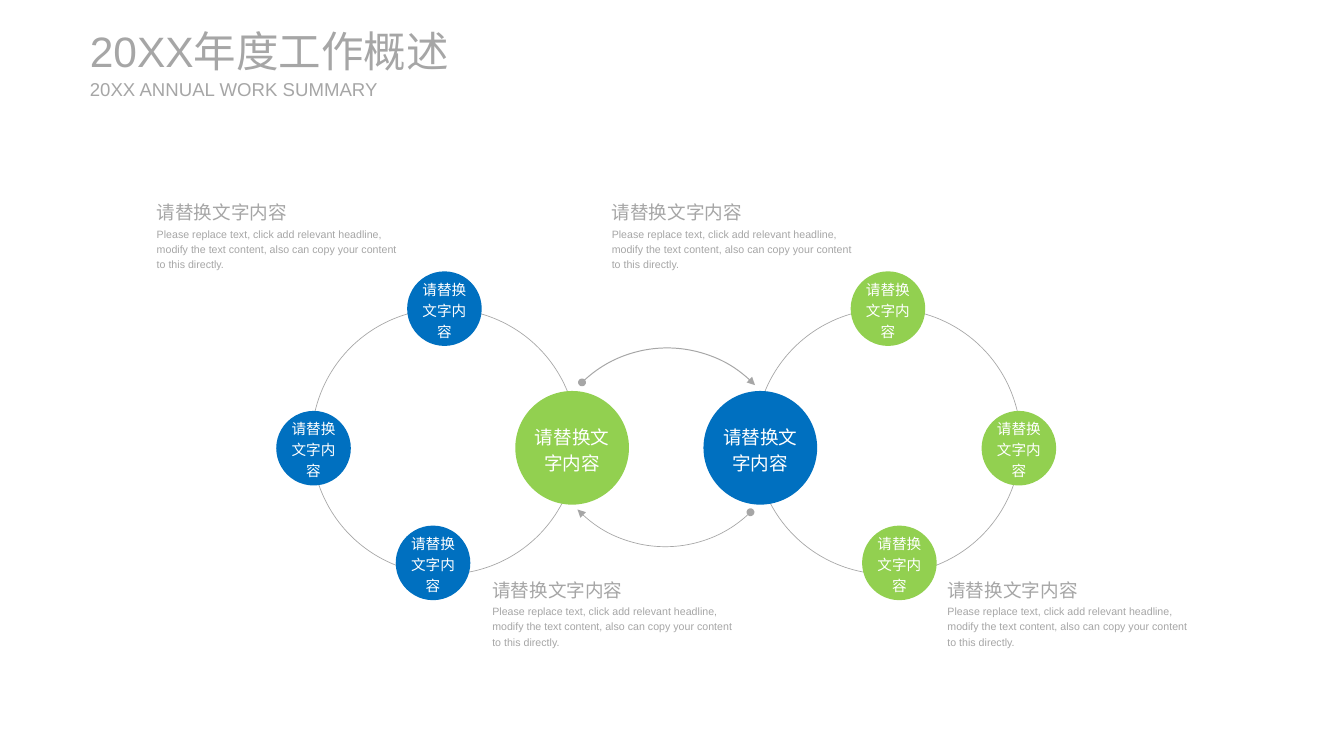
"""Build a slide of two linked rings with hubs, dots and notes; lengths are percent of the slide."""
from typing import NamedTuple

from lxml import etree
from pptx import Presentation
from pptx import util as u
from pptx.dml import color
from pptx.enum import shapes, text
from pptx.oxml import ns

WIDE, HIGH = 14.06, 7.91
MID = 49.57
HUES = {"gray": "A6A6A6", "green": "92D050", "blue": "0070C0", "white": "FFFFFF"}
LABEL = "请替换文字内容"
BODY = ("Please replace text, click add relevant headline, modify the text content, "
        "also can copy your content to this directly.")


class Disc(NamedTuple):
    off: float
    y: float
    size: float
    font: int
    left: str
    right: str


class Arc(NamedTuple):
    x: float
    y: float
    turn: float
    line: float


class Note(NamedTuple):
    x: float
    y: float


class Title(NamedTuple):
    words: str
    y: float
    wide: float
    high: float
    font: int


RING = Disc(16.5, 58.41, 19.77, 0, "", "")
DISCS = [
    Disc(7.0, 59.23, 8.46, 14, "green", "blue"),
    Disc(26.24, 59.29, 5.55, 11, "blue", "green"),
    Disc(16.5, 40.83, 5.55, 11, "blue", "green"),
    Disc(17.35, 74.46, 5.55, 11, "blue", "green"),
]
ARC_SIZE = 18.21
ARCS = [Arc(49.64, 62.2, 315.9, 0.75), Arc(49.5, 56.13, 135.9, 0.5)]
STEP = 33.86
NOTES = [Note(x + n * STEP, y) for x, y in [(36.63, 75.98), (11.66, 26.04)] for n in range(2)]
TITLES = [
    Title("20XX年度工作概述", 3.29, 30.73, 6.83, 32),
    Title("20XX ANNUAL WORK SUMMARY", 10.24, 21.83, 3.03, 14),
]


def across(part: float) -> int:
    return u.Inches(WIDE * part / 100)


def down(part: float) -> int:
    return u.Inches(HIGH * part / 100)


def tint(name: str) -> color.RGBColor:
    return color.RGBColor.from_string(HUES[name])


def write(shape, words: str, size: int, hue: str = "gray", align=text.PP_ALIGN.LEFT,
          anchor=text.MSO_ANCHOR.TOP, wrap: bool = True, gap: float = 1.2,
          grow: bool = True) -> None:
    frame = shape.text_frame
    frame.margin_left = frame.margin_right = frame.margin_top = frame.margin_bottom = 0
    frame.word_wrap = wrap
    frame.vertical_anchor = anchor
    frame.auto_size = text.MSO_AUTO_SIZE.SHAPE_TO_FIT_TEXT if grow else text.MSO_AUTO_SIZE.NONE
    para = frame.paragraphs[0]
    para.alignment = align
    para.line_spacing = gap
    run = para.add_run()
    run.text = words
    run.font.size = u.Pt(size)
    run.font.name = "Arial"
    run.font.color.rgb = tint(hue)


def round_at(slide, kind, x: float, y: float, size: float, fill: str = "", line: float = 0):
    side = across(size)
    shape = slide.shapes.add_shape(kind, across(x) - side // 2, down(y) - side // 2, side, side)
    shape.shadow.inherit = False
    if fill:
        shape.fill.solid()
        shape.fill.fore_color.rgb = tint(fill)
    else:
        shape.fill.background()
    if line:
        shape.line.color.rgb = tint("gray")
        shape.line.width = u.Pt(line)
    else:
        shape.line.fill.background()
    return shape


def draw_disc(slide, disc: Disc, side: int) -> None:
    hue = disc.left if side < 0 else disc.right
    shape = round_at(slide, shapes.MSO_SHAPE.OVAL, MID + side * disc.off, disc.y, disc.size, hue)
    write(shape, LABEL, disc.font, hue="white", align=text.PP_ALIGN.CENTER,
          anchor=text.MSO_ANCHOR.MIDDLE, grow=False)


def draw_arc(slide, arc: Arc) -> None:
    shape = round_at(slide, shapes.MSO_SHAPE.ARC, arc.x, arc.y, ARC_SIZE, line=arc.line)
    shape.rotation = arc.turn
    edge = shape.element.spPr.find(ns.qn("a:ln"))
    for tag, tip in [("a:headEnd", "oval"), ("a:tailEnd", "triangle")]:
        etree.SubElement(edge, ns.qn(tag)).set("type", tip)


def add_box(slide, x: float, y: float, wide: float, high: float):
    return slide.shapes.add_textbox(across(x), down(y), across(wide), down(high))


def draw_note(slide, note: Note) -> None:
    write(add_box(slide, note.x, note.y + 3.73, 18.35, 6.07), BODY, 8)
    write(add_box(slide, note.x, note.y, 9.74, 3.54), LABEL, 14, wrap=False)


def draw_title(slide, title: Title) -> None:
    box = add_box(slide, 6.69, title.y, title.wide, title.high)
    write(box, title.words, title.font, anchor=text.MSO_ANCHOR.MIDDLE, gap=1.0)


def main() -> None:
    deck = Presentation()
    deck.slide_width, deck.slide_height = u.Inches(WIDE), u.Inches(HIGH)
    slide = deck.slides.add_slide(deck.slide_layouts[6])
    for side in (-1, 1):
        round_at(slide, shapes.MSO_SHAPE.OVAL, MID + side * RING.off, RING.y, RING.size, line=0.5)
        for disc in DISCS:
            draw_disc(slide, disc, side)
    for arc in ARCS:
        draw_arc(slide, arc)
    for note in NOTES:
        draw_note(slide, note)
    for title in TITLES:
        draw_title(slide, title)
    deck.save("out.pptx")


if __name__ == "__main__":
    main()
